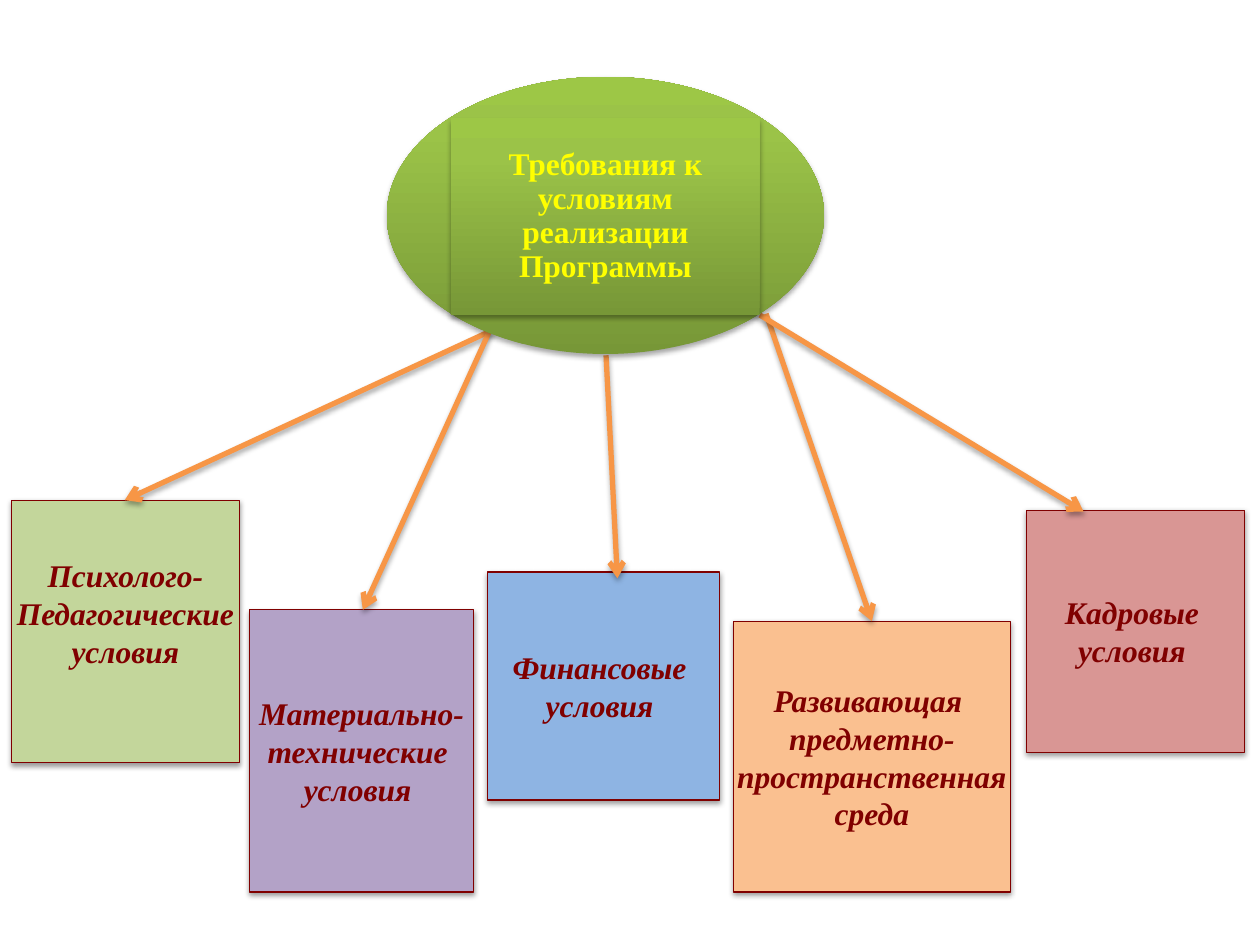
"""Build a slide linking the programme requirements to five groups of conditions."""
import copy

import lxml.etree
import pptx
import pptx.dml.color
import pptx.enum.shapes
import pptx.enum.text
import pptx.oxml.ns
import pptx.util

Inches = pptx.util.Inches
Pt = pptx.util.Pt
qn = pptx.oxml.ns.qn
AutoShape = pptx.enum.shapes.MSO_SHAPE


def color(hex_value):
    """Return the colour for a hex string."""
    return pptx.dml.color.RGBColor.from_string(hex_value)


def add_shadow(shape, distance, opacity):
    """Cast a soft shadow straight down."""
    effects = lxml.etree.SubElement(shape._element.spPr, qn("a:effectLst"))
    outer = lxml.etree.SubElement(
        effects, qn("a:outerShdw"), blurRad=str(Pt(3.1)), dist=str(Pt(distance)),
        dir="5400000", rotWithShape="0")
    shade = lxml.etree.SubElement(outer, qn("a:srgbClr"), val="000000")
    lxml.etree.SubElement(shade, qn("a:alpha"), val=str(opacity * 1000))


presentation = pptx.Presentation()
presentation.slide_width = Inches(10)
presentation.slide_height = Inches(7.5)
slide = presentation.slides.add_slide(presentation.slide_layouts[6])

conditions = [
    ("Психолого-\nПедагогические\nусловия", "C3D69B", (0.09, 3.97, 1.81, 2.08), 0.34),
    ("Финансовые \nусловия ", "8EB4E3", (3.87, 4.54, 1.84, 1.81), 0.05),
    ("Материально-\nтехнические \nусловия ", "B3A2C7", (1.98, 4.84, 1.78, 2.24), 0.05),
    ("Развивающая \nпредметно-\nпространственная\nсреда", "FAC090",
     (5.82, 4.93, 2.2, 2.15), 0.05),
    ("Кадровые \nусловия ", "D99694", (8.15, 4.05, 1.73, 1.92), 0.05),
]
for text, fill, position, bottom_margin in conditions:
    box = slide.shapes.add_shape(AutoShape.RECTANGLE, *map(Inches, position))
    box.fill.solid()
    box.fill.fore_color.rgb = color(fill)
    box.line.color.rgb = color("800000")
    box.line.width = Pt(0.75)
    add_shadow(box, 1.6, 38)
    frame = box.text_frame
    frame.text = text
    frame.word_wrap = False
    frame.vertical_anchor = pptx.enum.text.MSO_ANCHOR.MIDDLE
    frame.margin_left = frame.margin_right = Inches(0.09)
    frame.margin_top = Inches(0.05)
    frame.margin_bottom = Inches(bottom_margin)
    for paragraph in frame.paragraphs:
        paragraph.alignment = pptx.enum.text.PP_ALIGN.CENTER
        for run in paragraph.runs:
            run.font.name = "Times New Roman"
            run.font.size = Pt(18)
            run.font.bold = True
            run.font.italic = True
            run.font.color.rgb = color("800000")

arrows = [
    (3.91, 2.62, 0.99, 3.97),
    (6.08, 2.49, 6.92, 4.93),
    (3.88, 2.64, 2.88, 4.84),
    (4.81, 2.82, 4.9, 4.59),
    (6.03, 2.5, 8.6, 4.06),
]
for ends in arrows:
    arrow = slide.shapes.add_connector(
        pptx.enum.shapes.MSO_CONNECTOR.STRAIGHT, *map(Inches, ends))
    arrow.line.color.rgb = color("F79646")
    arrow.line.width = Pt(3)
    outline = arrow._element.spPr.find(qn("a:ln"))
    lxml.etree.SubElement(outline, qn("a:tailEnd"), type="arrow")
    add_shadow(arrow, 1.8, 35)

requirements = slide.shapes.add_group_shape()
for kind, position in [
    (AutoShape.OVAL, (3.07, 0.61, 3.47, 2.2)),
    (AutoShape.RECTANGLE, (3.58, 0.94, 2.45, 1.56)),
]:
    shape = requirements.shapes.add_shape(kind, *map(Inches, position))
    shape.fill.gradient()
    shape.fill.gradient_angle = 90
    stop_list = shape._element.spPr.find(".//" + qn("a:gsLst"))
    stop_list.append(copy.deepcopy(stop_list[-1]))
    stops = [(0, "779737"), (0.8, "9BC348"), (1, "9DC746")]
    for stop, (place, shade) in zip(shape.fill.gradient_stops, stops):
        stop.position = place
        stop.color.rgb = color(shade)
    shape.line.fill.background()
    add_shadow(shape, 1.8, 35)

frame = shape.text_frame
frame.text = "Требования к условиям реализации Программы"
frame.word_wrap = True
frame.vertical_anchor = pptx.enum.text.MSO_ANCHOR.MIDDLE
frame.margin_left = frame.margin_right = Inches(0.02)
frame.margin_top = frame.margin_bottom = Inches(0.02)
paragraph = frame.paragraphs[0]
paragraph.alignment = pptx.enum.text.PP_ALIGN.CENTER
paragraph.line_spacing = 0.9
font = paragraph.runs[0].font
font.name = "Times New Roman"
font.size = Pt(18)
font.bold = True
font.color.rgb = color("FFFF00")

presentation.save("out.pptx")
